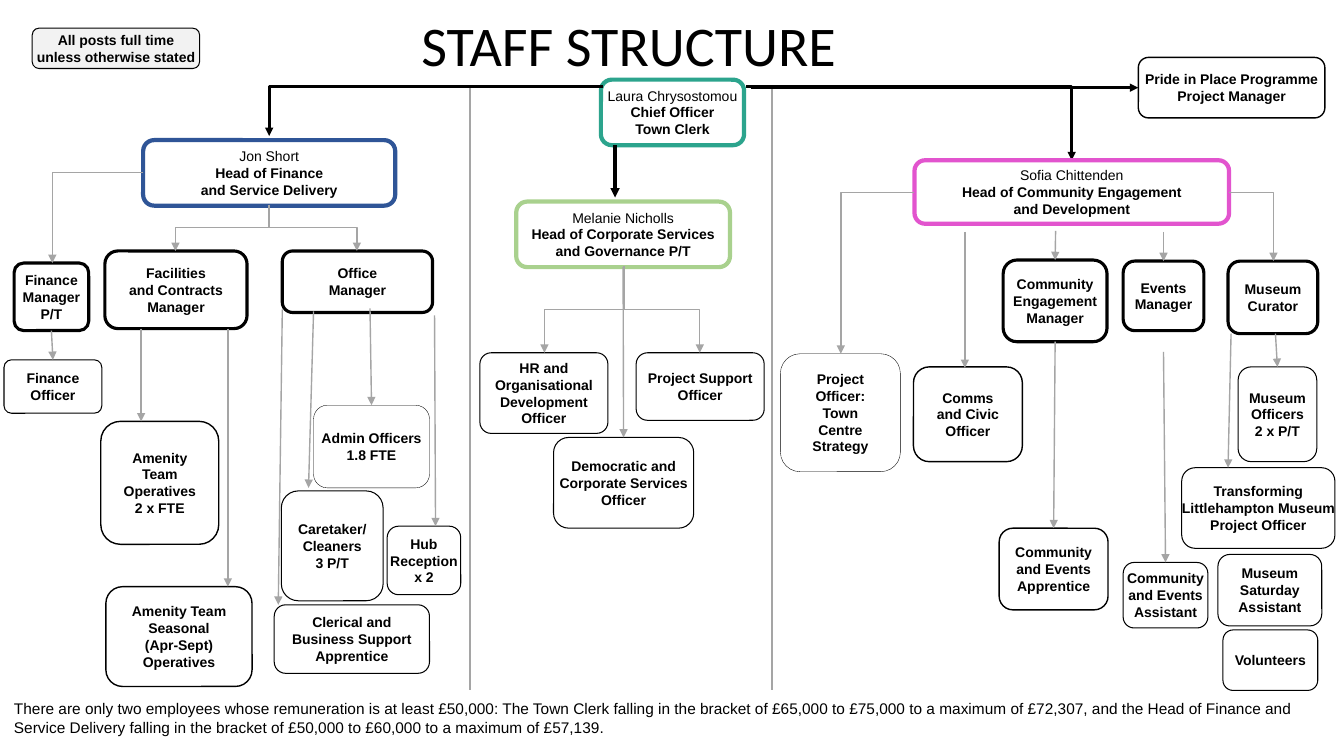
import pptx
import pptx.dml.color
import pptx.enum.shapes
import pptx.enum.text
import pptx.oxml
import pptx.oxml.ns
import pptx.util

Inches = pptx.util.Inches
MIDDLE = pptx.enum.text.MSO_ANCHOR.MIDDLE
CENTER = pptx.enum.text.PP_ALIGN.CENTER
LEFT = pptx.enum.text.PP_ALIGN.LEFT
CONNECTOR = pptx.enum.shapes.MSO_CONNECTOR

COLORS = {
    "ink": "000000",
    "paper": "FFFFFF",
    "note": "F2F2F2",
    "link": "A5A5A5",
    "clerk": "2CA48D",
    "finance": "2F5597",
    "corporate": "A9D18E",
    "community": "E254CE",
}
MANAGER = 2.25
HEAD = 3


def color(name):
    """Return the named colour."""
    return pptx.dml.color.RGBColor.from_string(COLORS[name])


def write_text(shape, text, size=10, bold=True, font="Arial", align=CENTER,
               anchor=MIDDLE, wrap=False, named=False, spacing=None):
    """Fill a shape with one paragraph per line; a named post opens with a light line."""
    frame = shape.text_frame
    frame.word_wrap = wrap
    frame.vertical_anchor = anchor
    for index, line in enumerate(text.split("\n")):
        para = frame.paragraphs[0] if index == 0 else frame.add_paragraph()
        para.alignment = align
        if spacing:
            para.line_spacing = spacing
        span = para.add_run()
        span.text = line
        span.font.name = font
        span.font.size = pptx.util.Pt(size)
        span.font.bold = bold and not (named and index == 0)
        span.font.color.rgb = color("ink")


class Region:
    """Part of the page whose contents are placed from its top left corner."""

    def __init__(self, page, left, top):
        """Remember the page and the corner."""
        self.page, self.left, self.top = page, left, top

    def post(self, text, left, top, width, height, weight=0.75, edge="ink",
             fill="paper", corner=0.167, **text_format):
        """Add a rounded box for one post."""
        box = self.page.shapes.add_shape(
            pptx.enum.shapes.MSO_SHAPE.ROUNDED_RECTANGLE,
            Inches(self.left + left), Inches(self.top + top), Inches(width), Inches(height))
        box.adjustments[0] = corner
        box.shadow.inherit = False
        box.fill.solid()
        box.fill.fore_color.rgb = color(fill)
        box.line.color.rgb = color(edge)
        box.line.width = pptx.util.Pt(weight)
        write_text(box, text, **text_format)
        return box

    def connect(self, kind, start, end, weight, tint, arrow=True):
        """Add a styled connector between two points."""
        link = self.page.shapes.add_connector(
            kind, Inches(self.left + start[0]), Inches(self.top + start[1]),
            Inches(self.left + end[0]), Inches(self.top + end[1]))
        link.line.color.rgb = color(tint)
        link.line.width = pptx.util.Pt(weight)
        properties = link._element.spPr
        if arrow:
            tail = pptx.oxml.parse_xml(
                f'<a:tailEnd {pptx.oxml.ns.nsdecls("a")} type="triangle"/>')
            properties.find(pptx.oxml.ns.qn("a:ln")).append(tail)
        properties.append(pptx.oxml.parse_xml(f'<a:effectLst {pptx.oxml.ns.nsdecls("a")}/>'))
        return link

    def straight(self, start=(0, 0), end=(0, 0), source=None, target=None, side=0,
                 weight=1, tint="link", arrow=True):
        """Draw a straight line, joined to a source's bottom or a target's side if given."""
        link = self.connect(CONNECTOR.STRAIGHT, start, end, weight, tint, arrow)
        if source is not None:
            link.begin_connect(source, 2)
        if target is not None:
            link.end_connect(target, side)

    def corner(self, start, end, weight=1, tint="link"):
        """Draw an arrow that runs across and then down."""
        link = self.connect(CONNECTOR.ELBOW, start, end, weight, tint)
        link._element.spPr.find(pptx.oxml.ns.qn("a:prstGeom")).set("prst", "bentConnector2")

    def branch(self, start, *ends):
        """Draw arrows that run down, across and down again to each end."""
        for end in ends:
            run, drop = end[0] - start[0], end[1] - start[1]
            middle_x, middle_y = start[0] + run / 2, start[1] + drop / 2
            turn = 90 if run < 0 else 270
            reach = -drop / 2 if run < 0 else drop / 2
            link = self.connect(
                CONNECTOR.ELBOW, (middle_x + reach, middle_y - abs(run) / 2),
                (middle_x - reach, middle_y + abs(run) / 2), 1, "link")
            link._element.spPr.find(pptx.oxml.ns.qn("a:xfrm")).set("rot", str(turn * 60000))


def add_title(page):
    """Format the title placeholder."""
    title = page.shapes.title
    title.left, title.top = Inches(0.82), Inches(-0.06)
    title.width, title.height = Inches(10.83), Inches(1.07)
    write_text(title, "STAFF STRUCTURE", size=40, bold=False, font="Calibri",
               wrap=True, spacing=0.9)


def add_leadership(page, left, top):
    """Add the chief officer, the note, the dividers and the main arrows."""
    area = Region(page, left, top)
    area.post("All posts full time\nunless otherwise stated", 0.32, 0.28, 1.66, 0.4, fill="note")
    area.post("Laura Chrysostomou\nChief Officer\nTown Clerk", 5.96, 0.79, 1.42, 0.65,
              HEAD, "clerk", named=True)
    pride = area.post("Pride in Place Programme\nProject Manager", 11.29, 0.57, 1.85, 0.6, 1)
    for x in (4.66, 7.66):
        area.straight((x, 0.86), (x, 6.85), weight=1.5, arrow=False)
    area.corner((7.4, 0.86), (10.63, 1.59), 2, "ink")
    area.corner((5.98, 0.86), (2.67, 1.35), 2, "ink")
    area.straight((6.1, 1.44), (6.1, 1.96), weight=2.25, tint="ink")
    area.straight((7.45, 0.87), target=pride, side=1, weight=2, tint="ink")


def add_finance(page, left, top):
    """Add the finance and service delivery branch."""
    area = Region(page, left, top)
    area.post("Jon Short\nHead of Finance\nand Service Delivery", 1.42, 0.39, 2.5, 0.65,
              HEAD, "finance", named=True)
    manager = area.post("Finance\nManager\nP/T", 0.14, 1.61, 0.74, 0.67, MANAGER, corner=0.14)
    officer = area.post("Finance\nOfficer", 0.04, 2.57, 0.97, 0.53, corner=0.14)
    area.post("Facilities\nand Contracts\nManager", 1.04, 1.49, 1.41, 0.77, MANAGER)
    area.post("Office\nManager", 2.8, 1.49, 1.49, 0.61, MANAGER)
    area.post("Amenity Team\nOperatives\n2 x FTE", 1, 3.18, 1.17, 1.22, 1, wrap=True)
    area.post("Amenity Team Seasonal\n(Apr-Sept) Operatives", 1.05, 4.82, 1.45, 0.99, 1, wrap=True)
    area.post("Caretaker/\nCleaners\n3 P/T", 2.79, 3.87, 1.01, 1.09)
    admin = area.post("Admin Officers\n1.8 FTE", 3.11, 3.02, 1.15, 0.82, 0.25)
    area.post("Clerical and\nBusiness Support\nApprentice", 2.72, 5, 1.54, 0.68)
    area.post("Hub\nReception\nx 2", 3.84, 4.22, 0.73, 0.68)
    area.corner((1.42, 0.71), (0.52, 1.61))
    area.branch((2.67, 1.03), (1.74, 1.49), (3.54, 1.49))
    area.straight(source=manager, target=officer)
    area.straight((3.67, 2.06), target=admin)
    for start, end in (((1.4, 2.26), (1.4, 3.18)), ((2.26, 2.26), (2.26, 4.82)),
                       ((3.11, 2.09), (3.06, 3.84)), ((4.31, 2.13), (4.32, 4.22)),
                       ((2.8, 2.07), (2.76, 5))):
        area.straight(start, end)


def add_corporate(page, left, top):
    """Add the corporate services and governance branch."""
    area = Region(page, left, top)
    head = area.post("Melanie Nicholls\nHead of Corporate Services\nand Governance P/T",
                     0.46, 1, 2.12, 0.65, HEAD, "corporate", named=True)
    area.post("HR and\nOrganisational\nDevelopment\nOfficer", 0.1, 2.5, 1.27, 0.8, corner=0.14)
    area.post("Project Support\nOfficer", 1.65, 2.5, 1.27, 0.67)
    democratic = area.post("Democratic and\nCorporate Services\nOfficer", 0.83, 3.34, 1.39, 0.9)
    area.branch((1.53, 1.64), (0.74, 2.5), (2.28, 2.5))
    area.straight(source=head, target=democratic)


def add_community(page, left, top):
    """Add the community engagement and development branch."""
    area = Region(page, left, top)
    area.post("Sofia Chittenden\nHead of Community Engagement\nand Development",
              1.41, 0.59, 3.12, 0.63, HEAD, "community", named=True)
    area.post("Project Officer:\nTown\nCentre\nStrategy", 0.08, 2.51, 1.19, 1.17, 0.25, wrap=True)
    area.post("Comms\nand Civic\nOfficer", 1.4, 2.64, 1.08, 0.94, 1)
    engagement = area.post("Community\nEngagement\nManager", 2.29, 1.58, 1.03, 0.81, MANAGER)
    events = area.post("Events\nManager", 3.48, 1.59, 0.8, 0.69, MANAGER)
    area.post("Museum\nCurator", 4.52, 1.59, 0.89, 0.72, MANAGER)
    apprentice = area.post("Community\nand Events\nApprentice", 2.25, 4.24, 1.08, 0.81, 1, wrap=True)
    assistant = area.post("Community\nand Events\nAssistant", 3.48, 4.58, 0.84, 0.65)
    officers = area.post("Museum\nOfficers\n2 x P/T", 4.62, 2.64, 0.78, 0.94)
    area.post("Transforming\nLittlehampton Museum\nProject Officer", 4.06, 3.64, 1.52, 0.8)
    area.post("Museum\nSaturday\nAssistant", 4.42, 4.5, 1.03, 0.71)
    area.post("Volunteers", 4.47, 5.25, 0.94, 0.6)
    area.corner((1.41, 0.91), (0.68, 2.51))
    area.corner((4.53, 0.91), (4.97, 1.59))
    area.straight((1.91, 1.3), (1.91, 2.65))
    area.straight((4.55, 2.31), (4.52, 3.64))
    area.straight(source=engagement, target=apprentice)
    for start, target in (((2.81, 1.29), engagement), ((3.88, 1.3), events),
                          ((3.88, 2.49), assistant), ((4.99, 2.31), officers)):
        area.straight(start, target=target)


def add_footnote(page, left, top, width, height):
    """Add the remuneration statement."""
    box = page.shapes.add_textbox(Inches(left), Inches(top), Inches(width), Inches(height))
    write_text(box, "There are only two employees whose remuneration is at least £50,000: "
               "The Town Clerk falling in the bracket of £65,000 to £75,000 to a maximum of "
               "£72,307, and the Head of Finance and Service Delivery falling in the bracket "
               "of £50,000 to £60,000 to a maximum of £57,139.", size=11, bold=False,
               align=LEFT, anchor=pptx.enum.text.MSO_ANCHOR.TOP, wrap=True)
    box.text_frame.auto_size = pptx.enum.text.MSO_AUTO_SIZE.SHAPE_TO_FIT_TEXT


def main():
    """Build and save the deck."""
    deck = pptx.Presentation()
    deck.slide_width, deck.slide_height = Inches(13.33), Inches(7.5)
    page = deck.slides.add_slide(deck.slide_layouts.get_by_name("Title Only"))
    add_title(page)
    add_leadership(page, 0, 0)
    add_finance(page, 0, 1)
    add_corporate(page, 4.66, 1)
    add_community(page, 7.66, 1)
    add_footnote(page, 0.04, 6.89, 13.2, 0.47)
    deck.save("out.pptx")


if __name__ == "__main__":
    main()
